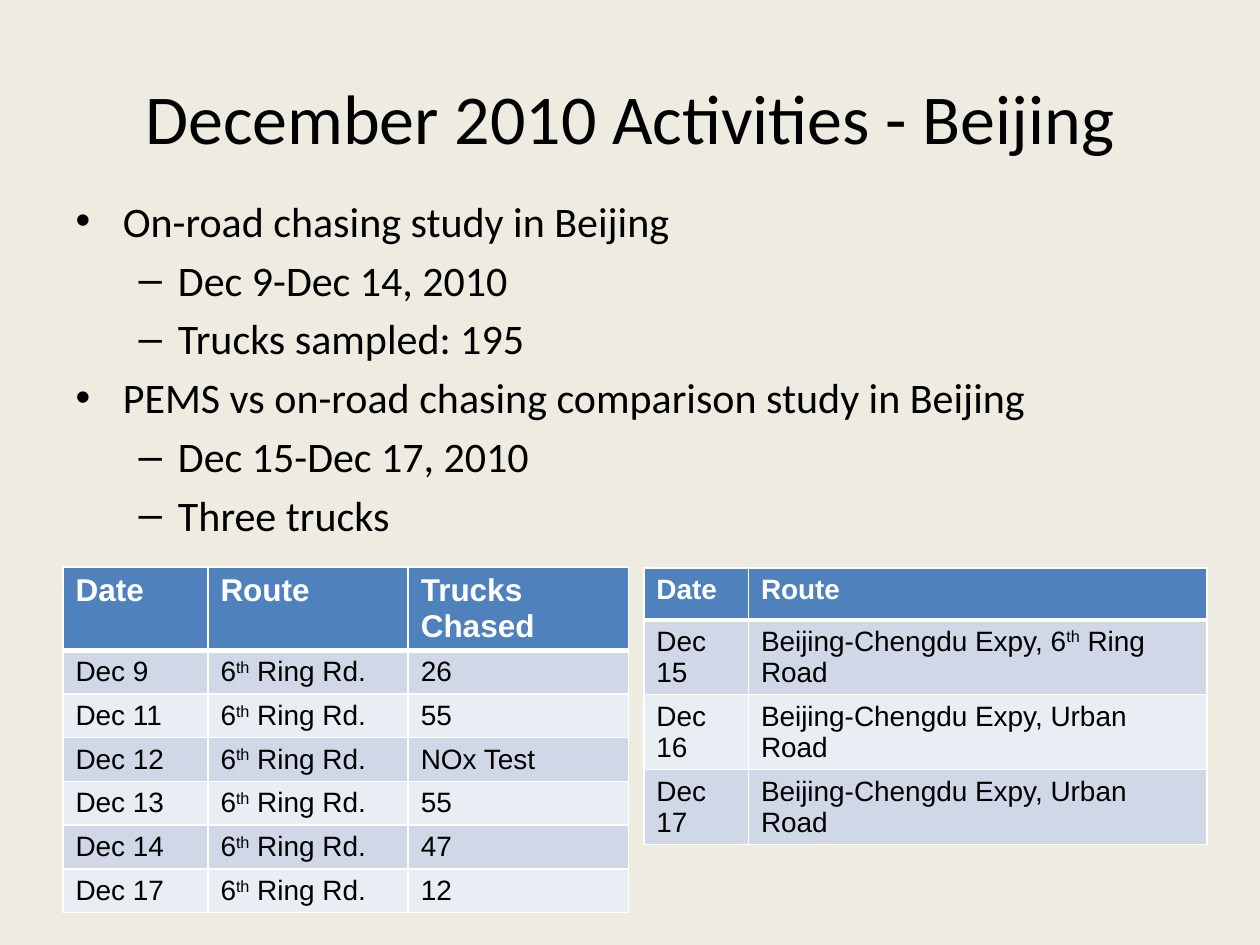
from dataclasses import dataclass

import pptx
import pptx.dml.color
import pptx.enum.text
import pptx.oxml
import pptx.oxml.ns
import pptx.util
from pptx.util import Inches

RGBColor = pptx.dml.color.RGBColor
CREAM = RGBColor(0xEE, 0xEC, 0xE1)
BLACK = RGBColor(0x00, 0x00, 0x00)
WHITE = RGBColor(0xFF, 0xFF, 0xFF)
BLUE = RGBColor(0x4F, 0x81, 0xBD)
BAND_DARK = RGBColor(0xD0, 0xD8, 0xE8)
BAND_LIGHT = RGBColor(0xE9, 0xED, 0xF4)
SUPERSCRIPT_MARK = "^"

BULLETS = [
    (0, "On-road chasing study in Beijing"),
    (1, "Dec 9-Dec 14, 2010"),
    (1, "Trucks sampled: 195"),
    (0, "PEMS vs on-road chasing comparison study in Beijing"),
    (1, "Dec 15-Dec 17, 2010"),
    (1, "Three trucks"),
]


@dataclass
class RouteTable:
    left: float
    top: float
    widths: list[float]
    row_height: float
    header_size: int
    rows: list[list[str]]


RING_ROAD = "6^th^ Ring Rd."
CHASES = [("Dec 9", "26"), ("Dec 11", "55"), ("Dec 12", "NOx Test"),
          ("Dec 13", "55"), ("Dec 14", "47"), ("Dec 17", "12")]
URBAN_ROUTE = "Beijing-Chengdu Expy, Urban Road"

TABLES = [
    RouteTable(0.5, 4.5, [1.15, 1.59, 1.75], 0.25, 18,
               [["Date", "Route", "Trucks Chased"]]
               + [[date, RING_ROAD, count] for date, count in CHASES]),
    RouteTable(5.11, 4.51, [0.83, 3.64], 0.41, 16,
               [["Date", "Route"],
                ["Dec 15", "Beijing-Chengdu Expy, 6^th^ Ring Road"],
                ["Dec 16", URBAN_ROUTE],
                ["Dec 17", URBAN_ROUTE]]),
]


def set_format(font, name: str, size: int, color: RGBColor, bold: bool = False) -> None:
    values = {"name": name, "size": pptx.util.Pt(size), "bold": bold}
    for key, value in values.items():
        setattr(font, key, value)
    font.color.rgb = color


def place(sp, left: float, top: float, width: float, height: float) -> None:
    values = {"left": left, "top": top, "width": width, "height": height}
    for key, value in values.items():
        setattr(sp, key, Inches(value))
    sp.text_frame.auto_size = pptx.enum.text.MSO_AUTO_SIZE.NONE


def add_run(p, text: str, name: str, size: int, color: RGBColor, bold: bool = False):
    r = p.add_run()
    r.text = text
    set_format(r.font, name, size, color, bold)
    return r


def set_borders(cell, widths: dict[str, int]) -> None:
    tcPr = cell._tc.get_or_add_tcPr()
    for side, width in widths.items():
        tcPr.append(pptx.oxml.parse_xml(
            f'<a:ln{side} {pptx.oxml.ns.nsdecls("a")} w="{pptx.util.Pt(width)}">'
            f'<a:solidFill><a:srgbClr val="{WHITE}"/></a:solidFill></a:ln{side}>'))


def fill_cell(cell, text: str, row: int, header_size: int) -> None:
    header = row == 0
    set_borders(cell, {"L": 1, "R": 1, "T": 3 if row == 1 else 1, "B": 3 if header else 1})
    cell.fill.solid()
    cell.fill.fore_color.rgb = BLUE if header else BAND_DARK if row % 2 else BAND_LIGHT
    p = cell.text_frame.paragraphs[0]
    for i, part in enumerate(text.split(SUPERSCRIPT_MARK)):
        r = add_run(p, part, "Arial", header_size if header else 16,
                    WHITE if header else BLACK, header)
        if i % 2:
            r._r.get_or_add_rPr().set("baseline", "30000")


def add_route_table(s, spec_table: RouteTable) -> None:
    t = spec_table
    table = s.shapes.add_table(
        len(t.rows), len(t.widths), Inches(t.left), Inches(t.top),
        Inches(sum(t.widths)), Inches(t.row_height * len(t.rows))).table
    for column, width in zip(table.columns, t.widths):
        column.width = Inches(width)
    for i, values in enumerate(t.rows):
        table.rows[i].height = Inches(t.row_height)
        for j, text in enumerate(values):
            fill_cell(table.cell(i, j), text, i, t.header_size)


def main() -> None:
    prs = pptx.Presentation()
    prs.slide_width, prs.slide_height = Inches(10), Inches(7.5)
    s = prs.slides.add_slide(prs.slide_layouts[1])
    s.background.fill.solid()
    s.background.fill.fore_color.rgb = CREAM

    title, body = s.placeholders
    place(title, 0.5, 0.3, 9, 1.25)
    add_run(title.text_frame.paragraphs[0], "December 2010 Activities - Beijing",
            "Calibri", 40, BLACK)

    place(body, 0.5, 1.5, 9, 2.33)
    tf = body.text_frame
    for i, (level, text) in enumerate(BULLETS):
        p = tf.add_paragraph() if i else tf.paragraphs[0]
        p.level = level
        add_run(p, text, "Calibri", 24, BLACK)

    for route_table in TABLES:
        add_route_table(s, route_table)
    prs.save("out.pptx")


if __name__ == "__main__":
    main()
